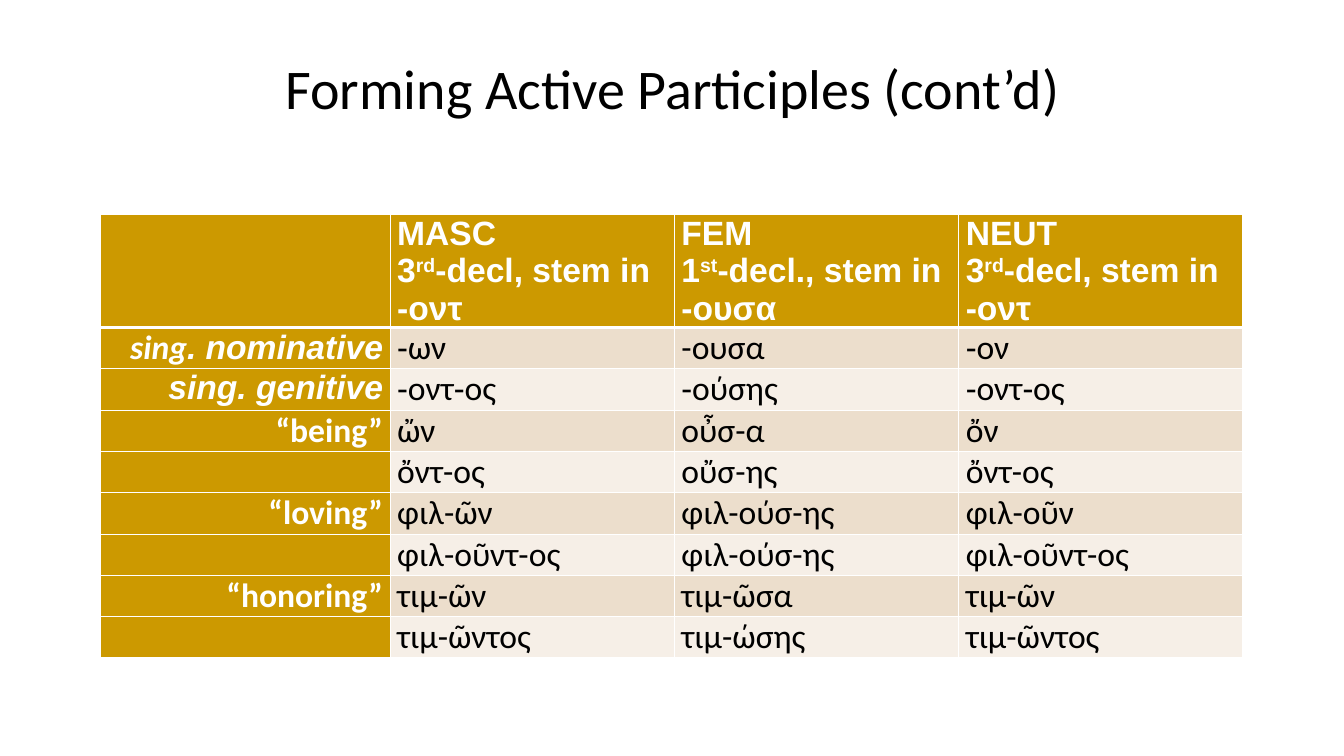
"""Build a slide with a table of Greek active participle forms."""
import lxml.etree
import pptx
import pptx.dml.color
import pptx.enum.text
import pptx.oxml.ns
import pptx.util

TITLE = "Forming Active Participles (cont’d)"
GENDERS = [
    ("MASC", "3", "rd", "-decl, stem in ‑οντ"),
    ("FEM", "1", "st", "-decl., stem in ‑ουσα"),
    ("NEUT", "3", "rd", "-decl, stem in ‑οντ"),
]
FORMS = [
    ([("sing", "Calibri", True), (". nominative", "Arial", True)], "‑ων", "-ουσα", "‑ον"),
    ([("sing. genitive", "Arial", True)], "‑οντ‑ος", "‑ούσης", "‑οντ‑ος"),
    ([("“being”", "Calibri", False)], "ὤν", "οὖσ-α", "ὄν"),
    ([], "ὄντ-ος", "οὔσ-ης", "ὄντ-ος"),
    ([("“loving”", "Calibri", False)], "φιλ-ῶν", "φιλ-ούσ-ης", "φιλ-οῦν"),
    ([], "φιλ-οῦντ-ος", "φιλ-ούσ-ης", "φιλ-οῦντ-ος"),
    ([("“honoring”", "Calibri", False)], "τιμ-ῶν", "τιμ-ῶσα", "τιμ-ῶν"),
    ([], "τιμ-ῶντος", "τιμ-ώσης", "τιμ-ῶντος"),
]

GOLD = pptx.dml.color.RGBColor(0xCC, 0x99, 0x00)
BANDS = [pptx.dml.color.RGBColor(0xEC, 0xDE, 0xCC), pptx.dml.color.RGBColor(0xF6, 0xEF, 0xE7)]
WHITE = pptx.dml.color.RGBColor(0xFF, 0xFF, 0xFF)
BLACK = pptx.dml.color.RGBColor(0x00, 0x00, 0x00)
LEFT = pptx.enum.text.PP_ALIGN.LEFT
RIGHT = pptx.enum.text.PP_ALIGN.RIGHT
COLUMNS = [2.87] + [2.82] * len(GENDERS)
ROWS = [1.12] + [0.41] * len(FORMS)


def add_span(para, text, font, size, color, bold=False, italic=False):
    span = para.add_run()
    span.text = text
    span.font.name = font
    span.font.size = pptx.util.Pt(size)
    span.font.color.rgb = color
    span.font.bold = bold
    span.font.italic = italic
    return span


def add_border(cell, side, points):
    properties = cell._tc.get_or_add_tcPr()
    line = lxml.etree.SubElement(properties, pptx.oxml.ns.qn("a:ln" + side))
    line.set("w", str(pptx.util.Pt(points)))
    fill = lxml.etree.SubElement(line, pptx.oxml.ns.qn("a:solidFill"))
    lxml.etree.SubElement(fill, pptx.oxml.ns.qn("a:srgbClr")).set("val", str(WHITE))


def prepare_cell(table, row, column, align=LEFT):
    cell = table.cell(row, column)
    cell.margin_left = cell.margin_right = pptx.util.Inches(0.07)
    cell.margin_top = cell.margin_bottom = 0
    for side in "LRTB":
        thick = (side, row) in (("B", 0), ("T", 1))
        add_border(cell, side, 3 if thick else 1)
    cell.fill.solid()
    cell.fill.fore_color.rgb = GOLD if row == 0 or column == 0 else BANDS[(row - 1) % 2]
    para = cell.text_frame.paragraphs[0]
    para.alignment = align
    para.space_after = pptx.util.Pt(12)
    return para


def fill_header(table):
    prepare_cell(table, 0, 0)
    for column, (gender, numeral, ordinal, rest) in enumerate(GENDERS, 1):
        para = prepare_cell(table, 0, column)
        add_span(para, gender, "Arial", 24, WHITE, True)
        para.add_line_break()
        add_span(para, numeral, "Arial", 24, WHITE, True)
        raised = add_span(para, ordinal, "Arial", 24, WHITE, True)
        raised.font._element.set("baseline", "30000")
        add_span(para, rest, "Arial", 24, WHITE, True)


def fill_forms(table):
    for row, (label, *forms) in enumerate(FORMS, 1):
        para = prepare_cell(table, row, 0, RIGHT)
        for text, font, italic in label:
            add_span(para, text, font, 24, WHITE, True, italic)
        for column, form in enumerate(forms, 1):
            add_span(prepare_cell(table, row, column), form, "Calibri", 24, BLACK)


def main():
    deck = pptx.Presentation()
    deck.slide_width = pptx.util.Inches(13.33)
    deck.slide_height = pptx.util.Inches(7.5)
    page = deck.slides.add_slide(deck.slide_layouts[5])

    title = page.shapes.title
    title.left, title.top = pptx.util.Inches(0.67), pptx.util.Inches(0.08)
    title.width, title.height = pptx.util.Inches(12), pptx.util.Inches(1.17)
    title.text_frame.vertical_anchor = pptx.enum.text.MSO_ANCHOR.BOTTOM
    para = title.text_frame.paragraphs[0]
    para.alignment = pptx.enum.text.PP_ALIGN.CENTER
    add_span(para, TITLE, "Calibri", 40, BLACK)

    frame = page.shapes.add_table(
        len(ROWS), len(COLUMNS), pptx.util.Inches(1), pptx.util.Inches(2.13),
        pptx.util.Inches(sum(COLUMNS)), pptx.util.Inches(sum(ROWS)))
    table = frame.table
    table.first_col = True
    for column, width in zip(table.columns, COLUMNS):
        column.width = pptx.util.Inches(width)
    for row, height in zip(table.rows, ROWS):
        row.height = pptx.util.Inches(height)
    fill_header(table)
    fill_forms(table)

    deck.save("out.pptx")


if __name__ == "__main__":
    main()
